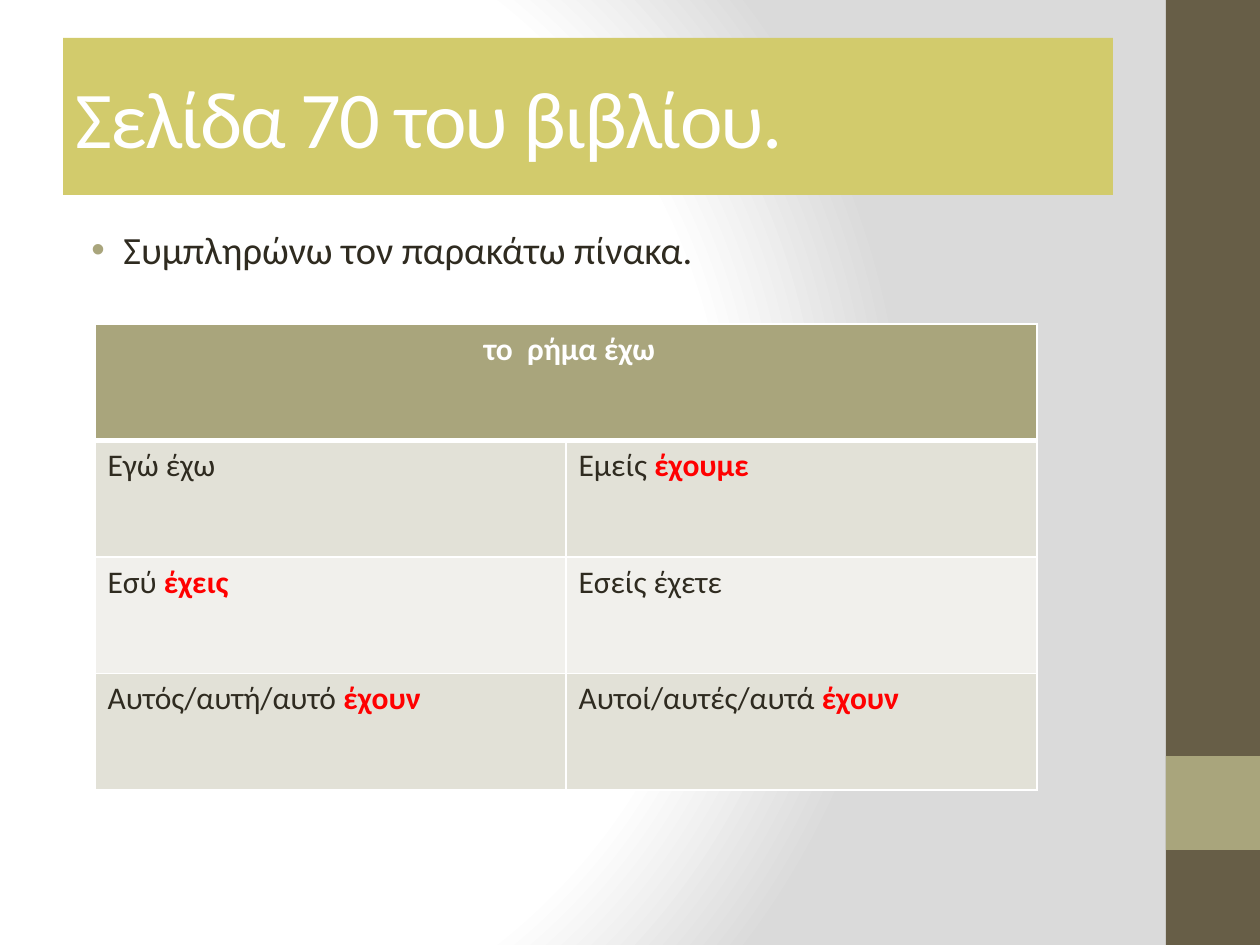
from dataclasses import dataclass

from pptx import Presentation
from pptx import util as u
from pptx.dml import color
from pptx.enum import shapes, text
from pptx.oxml import ns, parse_xml
from lxml import etree


@dataclass(frozen=True)
class Theme:
    font: str = "Calibri"
    white: str = "FFFFFF"
    shade: str = "DADADA"
    ink: str = "2F2B20"
    answer: str = "FF0000"
    sidebar: str = "675E47"
    accent: str = "A9A57C"
    banner: str = "D2CB6C"
    bands: tuple = ("E2E1D7", "F1F0EC")
    title_size: int = 46
    body_size: int = 22
    table_size: int = 18


def px(length):
    """Turn pixels (126 to the inch) into EMU."""
    return u.Emu(round(length * 914400 / 126))


def rgb(value):
    return color.RGBColor.from_string(value)


class SlideBuilder:
    def __init__(self, slide, theme):
        self.slide = slide
        self.theme = theme

    def background(self):
        """Radial gradient centred on the left part of the slide."""
        stops = ((0, self.theme.white), (75, self.theme.white), (100, self.theme.shade))
        stop_xml = "".join(
            f'<a:gs pos="{position * 1000}"><a:srgbClr val="{value}"/></a:gs>'
            for position, value in stops)
        self.slide.element.cSld.insert(0, parse_xml(
            f'<p:bg {ns.nsdecls("p", "a")}><p:bgPr><a:gradFill rotWithShape="1">'
            f'<a:gsLst>{stop_xml}</a:gsLst><a:path path="circle">'
            '<a:fillToRect l="20000" t="50000" r="100000" b="50000"/></a:path>'
            '</a:gradFill><a:effectLst/></p:bgPr></p:bg>'))

    def style(self, run, size, value, bold=False):
        run.font.name = self.theme.font
        run.font.size = u.Pt(size)
        run.font.color.rgb = rgb(value)
        run.font.bold = bold

    def rectangle(self, left, top, width, height, fill):
        shape = self.slide.shapes.add_shape(
            shapes.MSO_SHAPE.RECTANGLE, px(left), px(top), px(width), px(height))
        shape.shadow.inherit = False
        shape.fill.solid()
        shape.fill.fore_color.rgb = rgb(fill)
        shape.line.fill.background()
        return shape

    def title(self, left, top, width, height, words):
        shape = self.rectangle(left, top, width, height, self.theme.banner)
        frame = shape.text_frame
        frame.text = words
        frame.word_wrap = True
        frame.vertical_anchor = text.MSO_ANCHOR.MIDDLE
        paragraph = frame.paragraphs[0]
        paragraph.alignment = text.PP_ALIGN.LEFT
        run = paragraph.runs[0]
        self.style(run, self.theme.title_size, self.theme.white)
        run.font._element.set("spc", "-100")

    def bullet(self, left, top, width, height, words):
        box = self.slide.shapes.add_textbox(px(left), px(top), px(width), px(height))
        box.text_frame.word_wrap = True
        box.text_frame.text = words
        paragraph = box.text_frame.paragraphs[0]
        paragraph.space_before = u.Pt(4.4)
        self.style(paragraph.runs[0], self.theme.body_size, self.theme.ink)
        properties = paragraph._p.get_or_add_pPr()
        properties.set("marL", str(px(48)))
        properties.set("indent", str(-px(32)))
        bullet_color = etree.SubElement(properties, ns.qn("a:buClr"))
        etree.SubElement(bullet_color, ns.qn("a:srgbClr"), val=self.theme.accent)
        etree.SubElement(properties, ns.qn("a:buFont"), typeface="Arial")
        etree.SubElement(properties, ns.qn("a:buChar"), char="•")

    def cell_look(self, cell, fill, bottom=1):
        """White borders and a plain fill; bottom is the lower border in points."""
        properties = cell._tc.get_or_add_tcPr()
        for side, points in (("L", 1), ("R", 1), ("T", 1), ("B", bottom)):
            properties.append(parse_xml(
                f'<a:ln{side} {ns.nsdecls("a")} w="{u.Pt(points)}"><a:solidFill>'
                f'<a:srgbClr val="{self.theme.white}"/></a:solidFill></a:ln{side}>'))
        cell.fill.solid()
        cell.fill.fore_color.rgb = rgb(fill)

    def verb_table(self, left, top, width, height, heading, rows):
        """Each entry is a pair: the given words and the filled-in answer."""
        theme = self.theme
        table = self.slide.shapes.add_table(
            len(rows) + 1, 2, px(left), px(top), px(width), px(height)).table
        for cell in table.rows[0].cells:
            self.cell_look(cell, theme.accent, bottom=3)
        header = table.cell(0, 0)
        header.merge(table.cell(0, 1))
        header.text_frame.text = heading
        paragraph = header.text_frame.paragraphs[0]
        paragraph.alignment = text.PP_ALIGN.CENTER
        self.style(paragraph.runs[0], theme.table_size, theme.white, bold=True)

        for row, entries in enumerate(rows, start=1):
            for column, (given, answer) in enumerate(entries):
                cell = table.cell(row, column)
                self.cell_look(cell, theme.bands[(row - 1) % 2])
                cell.text_frame.text = given
                paragraph = cell.text_frame.paragraphs[0]
                self.style(paragraph.runs[0], theme.table_size, theme.ink)
                if answer:
                    run = paragraph.add_run()
                    run.text = answer
                    self.style(run, theme.table_size, theme.answer, bold=True)


def main():
    presentation = Presentation()
    presentation.slide_width, presentation.slide_height = px(1260), px(945)
    slide = presentation.slides.add_slide(presentation.slide_layouts[6])
    theme = Theme()
    builder = SlideBuilder(slide, theme)

    builder.background()
    builder.rectangle(1166, 0, 94, 945, theme.sidebar)
    builder.rectangle(1166, 756, 94, 94, theme.accent)
    builder.title(63, 38, 1050, 157, "Σελίδα 70 του βιβλίου.")
    builder.bullet(63, 220, 1050, 662, "Συμπληρώνω τον παρακάτω πίνακα.")
    builder.verb_table(95, 324, 942, 466, " το  ρήμα έχω", [
        [("Εγώ έχω", ""), ("Εμείς ", "έχουμε")],
        [("Εσύ ", "έχεις"), ("Εσείς έχετε", "")],
        [("Αυτός/αυτή/αυτό ", "έχουν"), ("Αυτοί/αυτές/αυτά ", "έχουν")],
    ])
    presentation.save("out.pptx")


if __name__ == "__main__":
    main()
